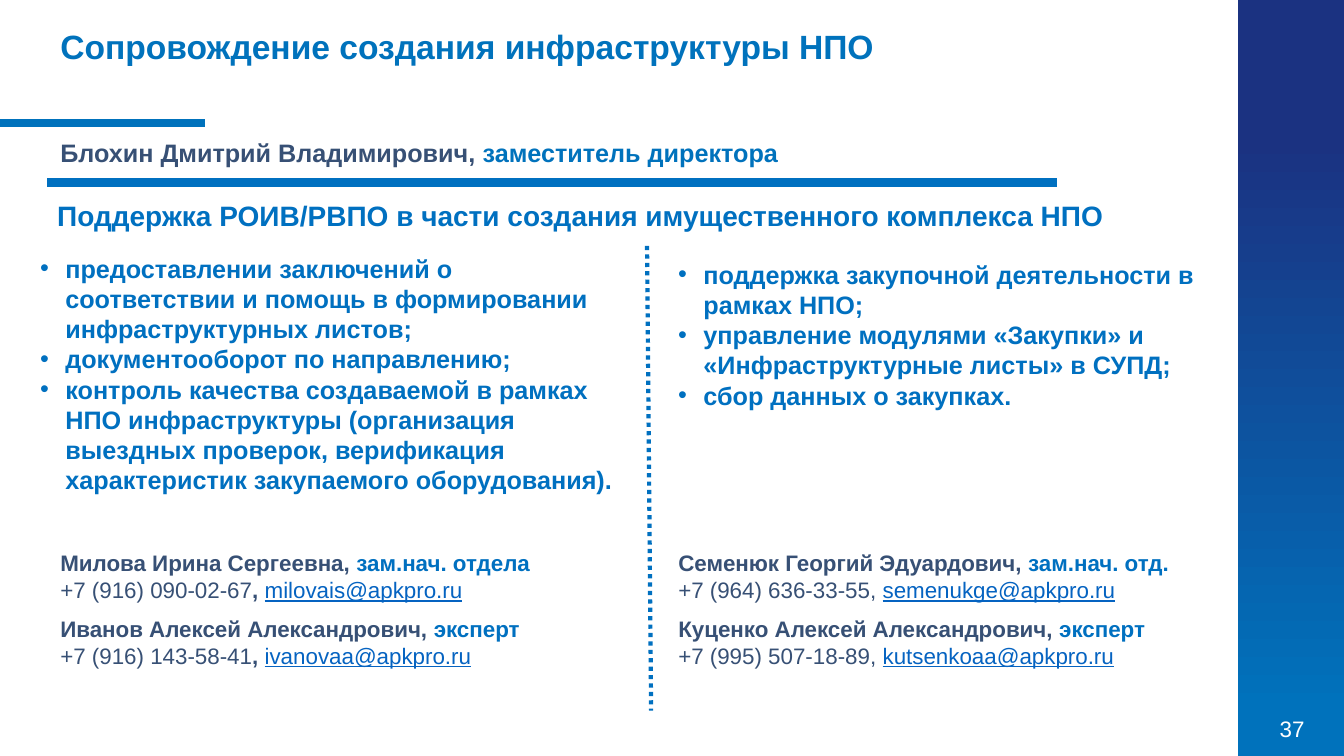
"""Builds the slide on infrastructure support, with duties and contacts in two columns."""
from pptx import Presentation
from pptx.dml.color import RGBColor as Rgb
from pptx.enum.dml import MSO_LINE as Dash
from pptx.enum.shapes import MSO_CONNECTOR as Link, MSO_SHAPE as Form
from pptx.enum.text import MSO_ANCHOR as Anchor, PP_ALIGN as Align
from pptx.oxml.ns import qn
from pptx.util import Pt
from lxml.etree import SubElement as Sub

HUES = {"brand": "0072BC", "blue": "0070C0", "navy": "1B3281",
        "ink": "375075", "link": "0563C1", "white": "FFFFFF"}

deck = Presentation()
deck.slide_width, deck.slide_height = Pt(960), Pt(540)
slide = deck.slides.add_slide(deck.slide_layouts[6])


def add_text(left, top, width, height, size, lines, bullet=False):
    """Add a text box; each line is a list of (text, hue, style) runs."""
    box = slide.shapes.add_textbox(Pt(left), Pt(top), Pt(width), Pt(height))
    frame = box.text_frame
    frame.word_wrap = True
    for i, line in enumerate(lines):
        para = frame.paragraphs[0] if i == 0 else frame.add_paragraph()
        if bullet:
            props = para._p.get_or_add_pPr()
            props.set("marL", str(Pt(18)))
            props.set("indent", str(-Pt(18)))
            Sub(props, qn("a:buFont"), typeface="Arial")
            Sub(props, qn("a:buChar"), char="•")
        for words, hue, style in line:
            run = para.add_run()
            run.text = words
            font = run.font
            font.name, font.size = "Arial", Pt(size)
            font.bold = style == "bold"
            font.underline = style == "under"
            font.color.rgb = Rgb.from_string(HUES[hue])
    return frame


def add_rule(x1, y1, x2, y2, hue, weight):
    """Add a straight line."""
    rule = slide.shapes.add_connector(Link.STRAIGHT, Pt(x1), Pt(y1), Pt(x2), Pt(y2))
    Sub(rule._element.spPr, qn("a:effectLst"))
    rule.line.color.rgb = Rgb.from_string(HUES[hue])
    rule.line.width = Pt(weight)
    return rule


band = slide.shapes.add_shape(Form.RECTANGLE, Pt(884.3), 0, Pt(75.7), Pt(540))
band.shadow.inherit = False
band.line.fill.background()
band.fill.gradient()
band.fill.gradient_angle = 90
for stop, hue, place in zip(band.fill.gradient_stops, ("brand", "navy"), (0.06, 0.82)):
    stop.color.rgb = Rgb.from_string(HUES[hue])
    stop.position = place

page = add_text(894.2, 505.4, 57.6, 29.5, 16, [[("37", "white", "")]])
page.vertical_anchor = Anchor.MIDDLE
page.paragraphs[0].alignment = Align.CENTER

add_text(36, 15.1, 756.7, 60.5, 24,
         [[("Сопровождение создания инфраструктуры НПО", "brand", "bold")]])
add_rule(0, 87.8, 146.2, 87.8, "brand", 6)

head = add_text(36, 97.2, 748.8, 30, 18,
                [[("Блохин Дмитрий Владимирович, ", "ink", "bold"),
                  ("заместитель директора", "brand", "bold")]])
head.paragraphs[0].line_spacing = 0.9
add_rule(33.8, 130.3, 755.3, 130.3, "blue", 6)

add_text(33.8, 138.2, 768.2, 28.8, 20,
         [[("Поддержка РОИВ/РВПО в части создания имущественного комплекса НПО",
            "blue", "bold")]])

duties = [
    (21.6, 177.1, 428.4, 175, [
        "предоставлении заключений о соответствии и помощь в формировании "
        "инфраструктурных листов;",
        "документооборот по направлению;",
        "контроль качества создаваемой в рамках НПО инфраструктуры (организация "
        "выездных проверок, верификация характеристик закупаемого оборудования)."]),
    (477.4, 181.4, 405.4, 142.6, [
        "поддержка закупочной деятельности в рамках НПО;",
        "управление модулями «Закупки» и «Инфраструктурные листы» в СУПД;",
        "сбор данных о закупках."]),
]
for left, top, width, height, items in duties:
    add_text(left, top, width, height, 18,
             [[(item, "blue", "bold")] for item in items], bullet=True)

split = add_rule(462.2, 175.7, 465.1, 507.6, "blue", 3)
split.line.dash_style = Dash.ROUND_DOT

staff = [
    (36, 388.8, "Милова Ирина Сергеевна", "зам.нач. отдела",
     "+7 (916) 090-02-67", "bold", "milovais@apkpro.ru"),
    (477.4, 388.8, "Семенюк Георгий Эдуардович", "зам.нач. отд.",
     "+7 (964) 636-33-55", "", "semenukge@apkpro.ru"),
    (36, 435.6, "Иванов Алексей Александрович", "эксперт",
     "+7 (916) 143-58-41", "bold", "ivanovaa@apkpro.ru"),
    (477.4, 435.6, "Куценко Алексей Александрович", "эксперт",
     "+7 (995) 507-18-89", "", "kutsenkoaa@apkpro.ru"),
]
for left, top, name, post, phone, comma, mail in staff:
    add_text(left, top, 370, 46.8, 16,
             [[(name + ", ", "ink", "bold"), (post, "blue", "bold")],
              [(phone, "ink", ""), (", ", "ink", comma), (mail, "link", "under")]])

deck.save("out.pptx")
